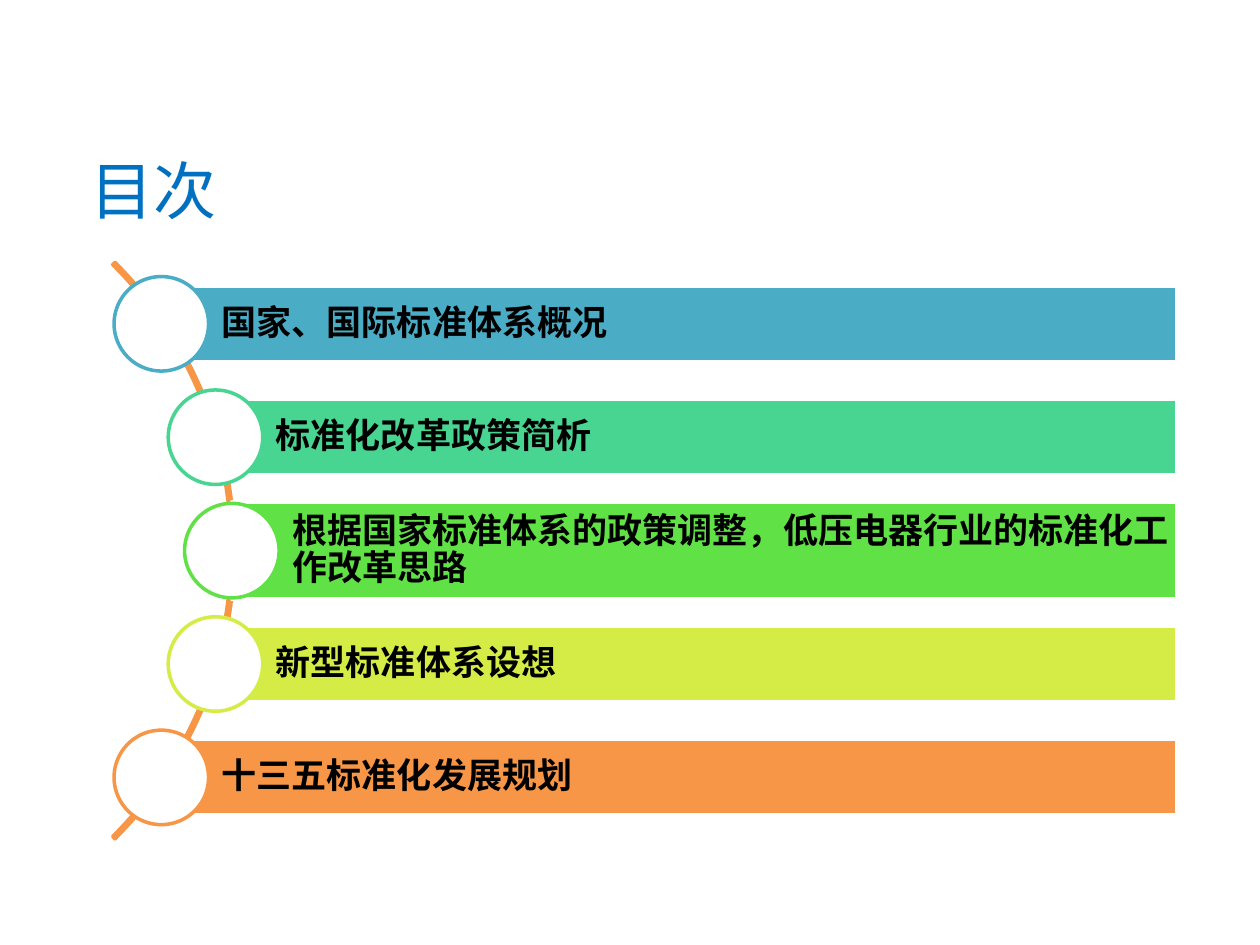
"""Build the contents slide: five agenda bars strung along an arc."""
import pptx
import pptx.dml.color
import pptx.enum.shapes
import pptx.enum.text
import pptx.oxml
import pptx.oxml.ns
import pptx.util

Inches, Pt = pptx.util.Inches, pptx.util.Pt
Shapes = pptx.enum.shapes.MSO_SHAPE
Anchor = pptx.enum.text.MSO_ANCHOR

HEADING = "目次"
AGENDA = [
    ("国家、国际标准体系概况", "4BACC6", 1.28, 0.6),
    ("标准化改革政策简析", "48D491", 1.71, 0.6),
    ("根据国家标准体系的政策调整，低压电器行业的标准化工作改革思路", "60E146", 1.84, 0.77),
    ("新型标准体系设想", "D5EC46", 1.71, 0.6),
    ("十三五标准化发展规划", "F79646", 1.28, 0.6),
]
THEME = {
    "font": "Noto Sans CJK SC",
    "heading_size": 36, "item_size": 20, "outline": 2,
    "heading": "0070C0", "text": "000000", "paper": "FFFFFF", "arc": "F79646",
}
MIDDLE_Y, STEP, BAR_RIGHT = 4.37, 0.9, 9.34
NODE, ARC_SIZE, ARC_RIGHT = 0.75, 6.47, 1.86


def rgb(code):
    """Turn a hex code into a colour."""
    return pptx.dml.color.RGBColor.from_string(code)


def add_centred(slide, kind, left, center_y, width, height, fill, line):
    """Add a flat shape whose vertical centre is given."""
    shape = slide.shapes.add_shape(
        kind, Inches(left), Inches(center_y - height / 2), Inches(width), Inches(height))
    shape.shadow.inherit = False
    if fill:
        shape.fill.solid()
        shape.fill.fore_color.rgb = rgb(fill)
    else:
        shape.fill.background()
    shape.line.color.rgb = rgb(line)
    shape.line.width = Pt(THEME["outline"])
    return shape


def write(frame, text, size, color, bold, anchor):
    """Put left-aligned text in a frame, with its East Asian font."""
    frame.text = text
    frame.word_wrap = True
    frame.vertical_anchor = anchor
    paragraph = frame.paragraphs[0]
    paragraph.alignment = pptx.enum.text.PP_ALIGN.LEFT
    run = paragraph.runs[0]
    run.font.size, run.font.bold = Pt(size), bold
    run.font.color.rgb = rgb(color)
    run.font.name = THEME["font"]
    east_asian = pptx.oxml.parse_xml(
        f'<a:ea {pptx.oxml.ns.nsdecls("a")} typeface="{THEME["font"]}"/>')
    run.font._element.find(pptx.oxml.ns.qn("a:latin")).addnext(east_asian)
    return paragraph


def add_item(slide, index, text, color, node_x, bar_height):
    """Add one agenda bar and the circle at its left end."""
    center_y = MIDDLE_Y + (index - len(AGENDA) // 2) * STEP
    bar = add_centred(slide, Shapes.RECTANGLE, node_x, center_y,
                      BAR_RIGHT - node_x, bar_height, color, THEME["paper"])
    frame = bar.text_frame
    frame.margin_left = Inches(0.48)
    frame.margin_top = frame.margin_right = frame.margin_bottom = Inches(0.06)
    paragraph = write(frame, text, THEME["item_size"], THEME["text"], True, Anchor.MIDDLE)
    paragraph.line_spacing = 0.9
    add_centred(slide, Shapes.OVAL, node_x - NODE / 2, center_y,
                NODE, NODE, THEME["paper"], color)


def main():
    """Build and save the slide."""
    deck = pptx.Presentation()
    deck.slide_width, deck.slide_height = Inches(10), Inches(7.5)
    slide = deck.slides.add_slide(deck.slide_layouts[5])

    title = slide.shapes.title
    title.left, title.top = Inches(0.62), Inches(1.15)
    title.width, title.height = Inches(3.83), Inches(0.71)
    write(title.text_frame, HEADING, THEME["heading_size"], THEME["heading"], False, Anchor.TOP)
    title.text_frame.auto_size = pptx.enum.text.MSO_AUTO_SIZE.SHAPE_TO_FIT_TEXT

    arc = add_centred(slide, Shapes.BLOCK_ARC, ARC_RIGHT - ARC_SIZE, MIDDLE_Y,
                      ARC_SIZE, ARC_SIZE, None, THEME["arc"])
    for position, value in enumerate((189, 27, 0.004)):
        arc.adjustments[position] = value

    for index, item in enumerate(AGENDA):
        add_item(slide, index, *item)
    deck.save("out.pptx")


if __name__ == "__main__":
    main()
